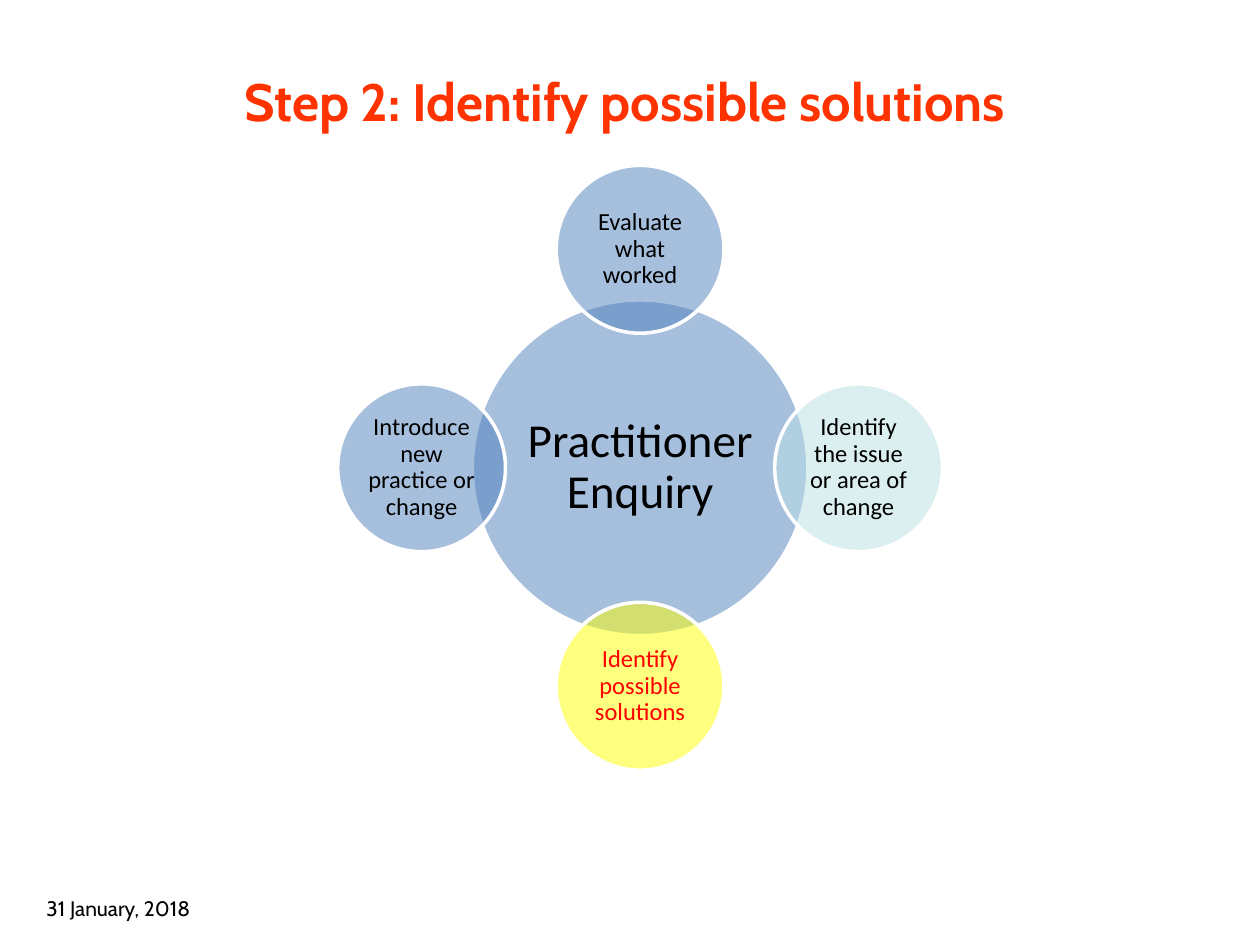
from dataclasses import dataclass

from lxml.etree import SubElement
from pptx import Presentation
from pptx.dml.color import RGBColor as RGB
from pptx.enum.shapes import MSO_SHAPE as SHAPE
from pptx.enum.text import MSO_ANCHOR as ANCHOR, PP_ALIGN as ALIGN
from pptx.oxml.ns import qn
from pptx.util import Inches, Pt


@dataclass(frozen=True)
class Theme:
    heading_font: str = "Cabin"
    body_font: str = "Calibri"
    title: str = "FF3300"
    text: str = "000000"
    highlight: str = "FF0000"
    line: str = "FFFFFF"
    blue: str = "4F81BD"
    pale: str = "BBE0E3"
    yellow: str = "FFFF00"
    opacity: float = 0.5
    title_size: int = 30
    hub_size: int = 27
    step_size: int = 14
    date_size: int = 12


THEME = Theme()
WIDTH, HEIGHT = 10, 7.5

# Regions as shares of the slide: left, top, width, height
TITLE_BOX = (0.046, 0.039, 0.9, 0.135)
CYCLE_BOX = (0.268, 0.175, 0.48, 0.64)
DATE_BOX = (0.027, 0.941, 0.295, 0.04)

# Steps of the cycle: label, direction from the hub, fill, text colour
STEPS = [
    ("Evaluate what worked", (0, -1), THEME.blue, THEME.text),
    ("Identify the issue or area of change", (1, 0), THEME.pale, THEME.text),
    ("Identify possible solutions", (0, 1), THEME.yellow, THEME.highlight),
    ("Introduce new practice or change", (-1, 0), THEME.blue, THEME.text),
]


def to_inches(box):
    x, y, w, h = box
    return x * WIDTH, y * HEIGHT, w * WIDTH, h * HEIGHT


def write(sp, text, font, size, color, align, bold=False):
    tf = sp.text_frame
    tf.word_wrap = True
    tf.vertical_anchor = ANCHOR.MIDDLE
    tf.text = text
    p = tf.paragraphs[0]
    p.alignment = align
    f = p.runs[0].font
    f.name, f.size, f.bold = font, Pt(size), bold
    f.color.rgb = RGB.from_string(color)
    return tf


def add_label(slide, box, *style, **options):
    sp = slide.shapes.add_textbox(*map(Inches, to_inches(box)))
    write(sp, *style, **options)


def add_circle(slide, cx, cy, d, text, size, fill, color, inset):
    sp = slide.shapes.add_shape(
        SHAPE.OVAL, *map(Inches, (cx - d / 2, cy - d / 2, d, d)))
    sp.shadow.inherit = False
    sp.fill.solid()
    sp.fill.fore_color.rgb = RGB.from_string(fill)
    # Translucent fill
    clr = sp.fill._xPr.find(qn("a:solidFill"))[0]
    SubElement(clr, qn("a:alpha")).set("val", str(int(THEME.opacity * 100000)))
    sp.line.color.rgb = RGB.from_string(THEME.line)
    sp.line.width = Pt(2)
    tf = write(sp, text, THEME.body_font, size, color, ALIGN.CENTER)
    tf.margin_left = tf.margin_right = Inches(inset)
    tf.margin_top = tf.margin_bottom = Inches(inset)
    tf.paragraphs[0].line_spacing = 0.9


def add_cycle(slide, box):
    x, y, w, h = to_inches(box)
    cx, cy = x + w / 2, y + h / 2
    hub = w * 0.555
    step = hub / 2
    orbit = (w - step) / 2
    # Hub
    add_circle(slide, cx, cy, hub, "Practitioner Enquiry", THEME.hub_size,
               THEME.blue, THEME.text, 0.04)
    # Steps around it
    for text, (dx, dy), fill, color in STEPS:
        add_circle(slide, cx + dx * orbit, cy + dy * orbit, step, text,
                   THEME.step_size, fill, color, 0.02)


def main():
    prs = Presentation()
    prs.slide_width, prs.slide_height = Inches(WIDTH), Inches(HEIGHT)
    slide = prs.slides.add_slide(prs.slide_layouts[6])
    add_label(slide, DATE_BOX, "31 January, 2018", THEME.heading_font,
              THEME.date_size, THEME.text, ALIGN.LEFT)
    add_label(slide, TITLE_BOX, "Step 2: Identify possible solutions",
              THEME.heading_font, THEME.title_size, THEME.title,
              ALIGN.CENTER, bold=True)
    add_cycle(slide, CYCLE_BOX)
    prs.save("out.pptx")


if __name__ == "__main__":
    main()
